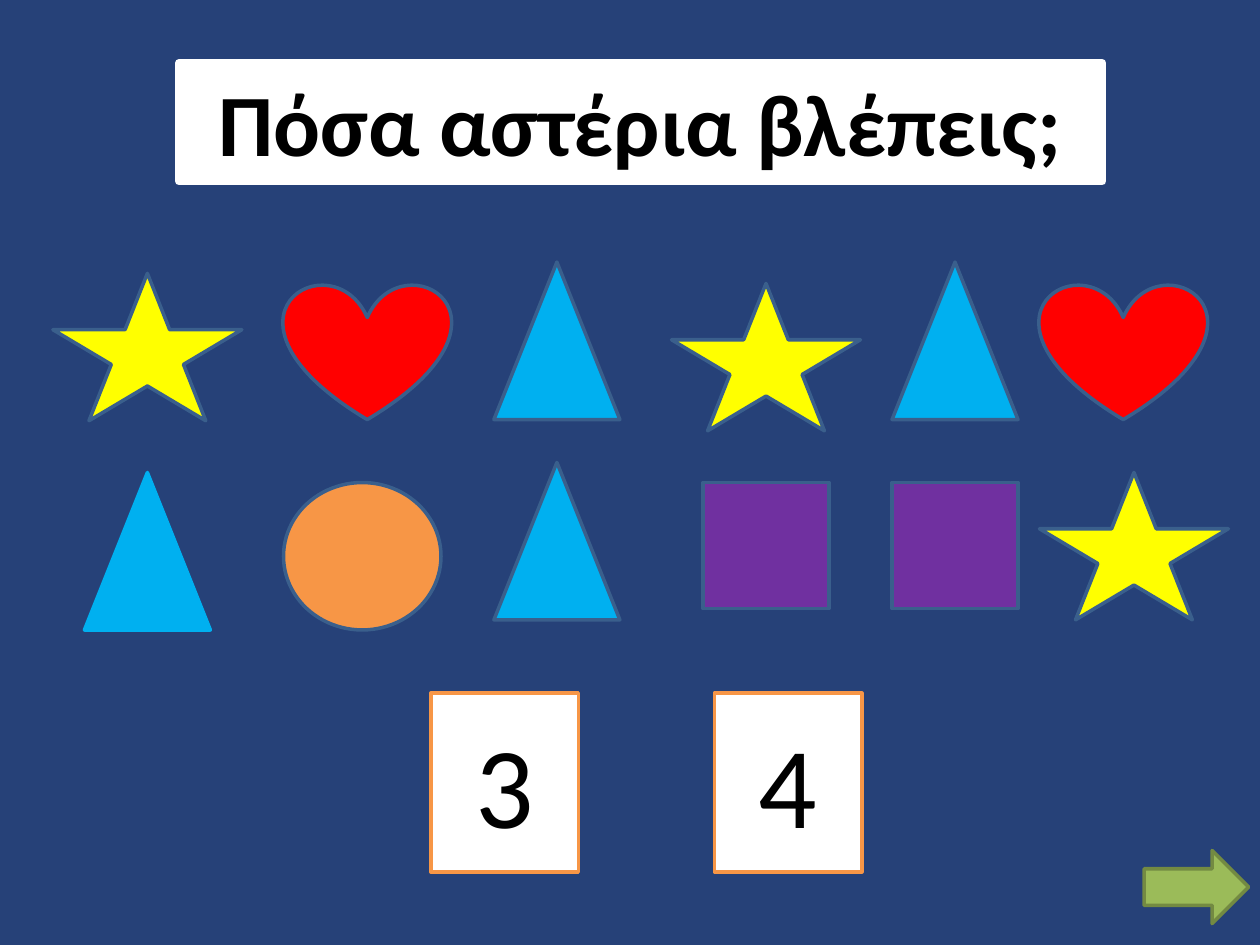
from typing import NamedTuple

from pptx import Presentation
from pptx import util as u
from pptx.dml.color import RGBColor
from pptx.enum import shapes, text

M = shapes.MSO_SHAPE
COLORS = {
    "navy": "264178", "outline": "3A5F8C", "yellow": "FFFF00", "red": "FF0000",
    "sky": "00B0F0", "orange": "F79646", "purple": "7030A0", "white": "FFFFFF",
    "black": "000000", "green": "9BBB59", "olive": "738A42",
}


class Figure(NamedTuple):
    preset: M
    width: float
    height: float
    fill: str


STAR = Figure(M.STAR_5_POINT, 1.5, 1.17, "yellow")
HEART = Figure(M.HEART, 1.33, 1.08, "red")
TRIANGLE = Figure(M.ISOSCELES_TRIANGLE, 1, 1.25, "sky")
CIRCLE = Figure(M.OVAL, 1.25, 1.17, "orange")
SQUARE = Figure(M.RECTANGLE, 1, 1, "purple")
CARD = Figure(M.RECTANGLE, 1.17, 1.42, "white")
BANNER = Figure(M.RECTANGLE, 7.33, 0.94, "white")
ARROW = Figure(M.RIGHT_ARROW, 0.83, 0.58, "green")

# figure, left, top, line colour
COUNTING_FIGURES = [
    (STAR, 0.42, 2.17, "outline"),
    (HEART, 2.25, 2.25, "outline"),
    (TRIANGLE, 3.92, 2.08, "outline"),
    (STAR, 5.33, 2.25, "outline"),
    (TRIANGLE, 7.08, 2.08, "outline"),
    (HEART, 8.25, 2.25, "outline"),
    (TRIANGLE, 0.67, 3.75, "sky"),
    (CIRCLE, 2.25, 3.83, "outline"),
    (TRIANGLE, 3.92, 3.67, "outline"),
    (SQUARE, 5.58, 3.83, "outline"),
    (SQUARE, 7.08, 3.83, "outline"),
    (STAR, 8.25, 3.75, "outline"),
]
ANSWERS = [("3", 3.42), ("4", 5.67)]


def rgb(name: str) -> RGBColor:
    return RGBColor.from_string(COLORS[name])


def add_figure(s, figure: Figure, left: float, top: float, line: str, weight: float = 2):
    sp = s.shapes.add_shape(figure.preset, u.Inches(left), u.Inches(top),
                            u.Inches(figure.width), u.Inches(figure.height))
    sp.shadow.inherit = False
    sp.fill.solid()
    sp.fill.fore_color.rgb = rgb(figure.fill)
    sp.line.color.rgb = rgb(line)
    sp.line.width = u.Pt(weight)
    return sp


def write(sp, words: str, size: float, anchor: text.MSO_ANCHOR, bold: bool = False) -> None:
    tf = sp.text_frame
    tf.word_wrap = True
    tf.vertical_anchor = anchor
    p = tf.paragraphs[0]
    p.alignment = text.PP_ALIGN.CENTER
    r = p.add_run()
    r.text = words
    for name, value in {"name": "Calibri", "size": u.Pt(size), "bold": bold}.items():
        setattr(r.font, name, value)
    r.font.color.rgb = rgb("black")


def main() -> None:
    prs = Presentation()
    prs.slide_width, prs.slide_height = u.Inches(10), u.Inches(7.5)
    s = prs.slides.add_slide(prs.slide_layouts[6])
    s.background.fill.solid()
    s.background.fill.fore_color.rgb = rgb("navy")

    for figure, left, top, line in COUNTING_FIGURES:
        add_figure(s, figure, left, top, line)
    for answer, left in ANSWERS:
        card = add_figure(s, CARD, left, 5.5, "orange")
        write(card, answer, 66, text.MSO_ANCHOR.MIDDLE)
    banner = add_figure(s, BANNER, 1.42, 0.5, "white", 4.5)
    write(banner, "Πόσα αστέρια βλέπεις;", 50, text.MSO_ANCHOR.TOP, bold=True)
    add_figure(s, ARROW, 9.08, 6.75, "olive")

    prs.save("out.pptx")


if __name__ == "__main__":
    main()
